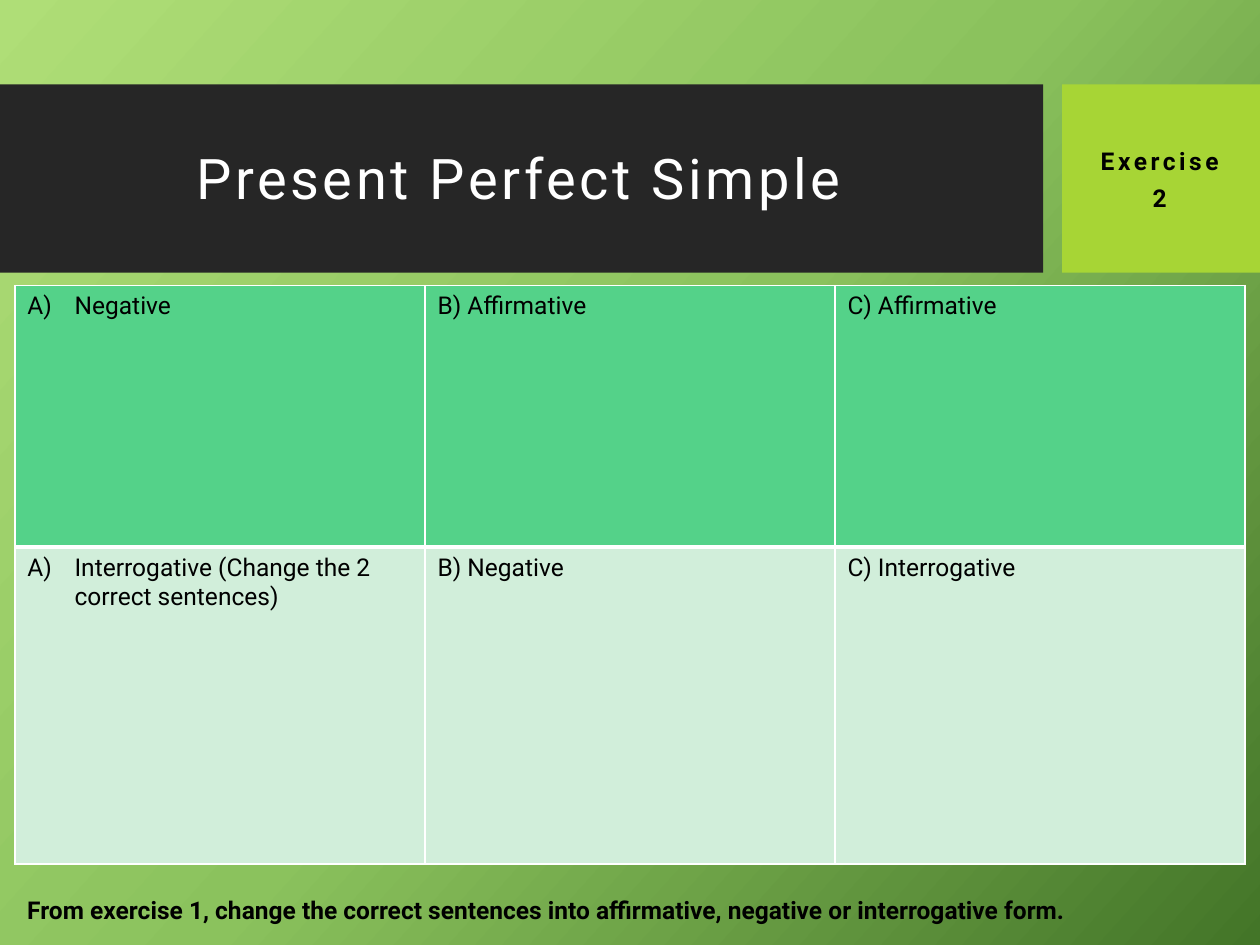
import pptx
import pptx.dml.color
import pptx.enum.shapes
import pptx.enum.text
import pptx.oxml
import pptx.oxml.ns
import pptx.util
from pptx.util import Cm

FONT = "Roboto"
NS = pptx.oxml.ns.nsdecls("a")
ALIGN = pptx.enum.text.PP_ALIGN
MIDDLE = pptx.enum.text.MSO_ANCHOR.MIDDLE


def rgb(value):
    return pptx.dml.color.RGBColor.from_string(value)


def xml(text):
    """Parse one DrawingML element, given without its namespace."""
    tag, rest = text[:text.index(" ")], text[text.index(" "):]
    return pptx.oxml.parse_xml(f"{tag} {NS}{rest}")


def add_run(p, text, size=14, color="000000", bold=False, spacing=0):
    r = p.add_run()
    r.text = text
    r.font.name, r.font.size, r.font.bold = FONT, pptx.util.Pt(size), bold
    r.font.color.rgb = rgb(color)
    if spacing:
        r.font._element.set("spc", str(spacing * 100))


def paint_background(s, stops, angle):
    fill = s.background.fill
    fill.gradient()
    fill.gradient_angle = 360 - angle  # python-pptx counts counter-clockwise
    gs_list = fill._fill._gradFill.find(pptx.oxml.ns.qn("a:gsLst"))
    for gs in list(gs_list):
        gs_list.remove(gs)
    for pos, color in stops:
        gs_list.append(xml(f'<a:gs pos="{pos * 1000}"><a:srgbClr val="{color}"/></a:gs>'))


def add_block(s, left, top, width, height, color):
    block = s.shapes.add_shape(pptx.enum.shapes.MSO_SHAPE.RECTANGLE,
                               left, top, width, height)
    block.shadow.inherit = False
    block.fill.solid()
    block.fill.fore_color.rgb = rgb(color)
    block.line.fill.background()


def fill_heading(sp, box, lines, **style):
    sp.left, sp.top, sp.width, sp.height = box
    tf = sp.text_frame
    tf.word_wrap = True
    tf.auto_size = pptx.enum.text.MSO_AUTO_SIZE.NONE
    tf.vertical_anchor = MIDDLE
    for i, line in enumerate(lines):
        p = tf.add_paragraph() if i else tf.paragraphs[0]
        p.alignment, p.line_spacing = ALIGN.CENTER, 0.9
        p.space_before, p.space_after = pptx.util.Pt(0), pptx.util.Pt(6)
        add_run(p, line, spacing=2, **style)


def add_header(s, left, top, width, height):
    title_width, gap = Cm(21.03), Cm(0.38)
    tag_left = left + title_width + gap
    tag_width = width - title_width - gap
    text_top, text_height = top + Cm(0.03), height + Cm(0.04)
    # Coloured bands
    add_block(s, left, top, title_width, height, "262626")
    add_block(s, tag_left, top, tag_width, height, "A7D535")
    # Title, brought in front of the bands
    title = s.shapes.title
    s.shapes._spTree.append(title._element)
    fill_heading(title, (left - Cm(0.08), text_top, title_width + Cm(0.05), text_height),
                 ["Present Perfect Simple"], size=32, color="FFFFFF")
    # Exercise number
    tag_box = (tag_left - Cm(0.05), text_top, tag_width + Cm(0.05), text_height)
    fill_heading(s.shapes.add_textbox(*tag_box), tag_box, ["Exercise", "2"], bold=True)


def set_borders(cell, **widths):
    tc_pr = cell._tc.get_or_add_tcPr()
    for i, side in enumerate("LRTB"):
        width = pptx.util.Pt(widths.get(side, 1))
        tc_pr.insert(i, xml(f'<a:ln{side} w="{width}"><a:solidFill>'
                            f'<a:srgbClr val="FFFFFF"/></a:solidFill></a:ln{side}>'))


def add_answer_table(s, left, top, width, row_heights, rows):
    n_cols = len(rows[0][1])
    table = s.shapes.add_table(len(rows), n_cols, left, top, width, sum(row_heights)).table
    for col in table.columns:
        col.width = width // n_cols
    for i, (color, texts) in enumerate(rows):
        table.rows[i].height = row_heights[i]
        for j, text in enumerate(texts):
            cell = table.cell(i, j)
            cell.fill.solid()
            cell.fill.fore_color.rgb = rgb(color)
            # Thick rule between the two rows
            set_borders(cell, **({"T": 3} if i else {"B": 3}))
            p = cell.text_frame.paragraphs[0]
            if j == 0:  # the first column is numbered automatically
                p_pr = p._p.get_or_add_pPr()
                p_pr.set("marL", str(Cm(0.95)))
                p_pr.set("indent", str(-Cm(0.95)))
                p_pr.append(xml('<a:buFont typeface="+mj-lt"/>'))
                p_pr.append(xml('<a:buAutoNum type="alphaUcParenR"/>'))
            add_run(p, text)


def add_instruction(s, left, top, width, height, text):
    tf = s.shapes.add_textbox(left, top, width, height).text_frame
    tf.word_wrap = True
    tf.auto_size = pptx.enum.text.MSO_AUTO_SIZE.SHAPE_TO_FIT_TEXT
    p = tf.paragraphs[0]
    p.alignment = ALIGN.JUSTIFY
    add_run(p, text, bold=True)


def main():
    prs = pptx.Presentation()
    prs.slide_width, prs.slide_height = Cm(25.4), Cm(19.05)
    s = prs.slides.add_slide(prs.slide_layouts[5])
    paint_background(s, [(0, "AFDE77"), (50, "8BC25D"), (100, "437528")], 42)

    add_header(s, 0, Cm(1.7), prs.slide_width, Cm(3.8))

    margin = Cm(0.3)
    content_width = prs.slide_width - 2 * margin
    add_instruction(s, margin, Cm(17.91), content_width, Cm(0.86),
                    "From exercise 1, change the correct sentences into "
                    "affirmative, negative or interrogative form.")
    add_answer_table(s, margin, Cm(5.76), content_width, [Cm(5.27), Cm(6.39)], [
        ("54D289", ["Negative", "B) Affirmative", "C) Affirmative"]),
        ("D1EEDA", ["Interrogative (Change the 2 correct sentences)",
                    "B) Negative", "C) Interrogative"]),
    ])
    prs.save("out.pptx")


if __name__ == "__main__":
    main()
